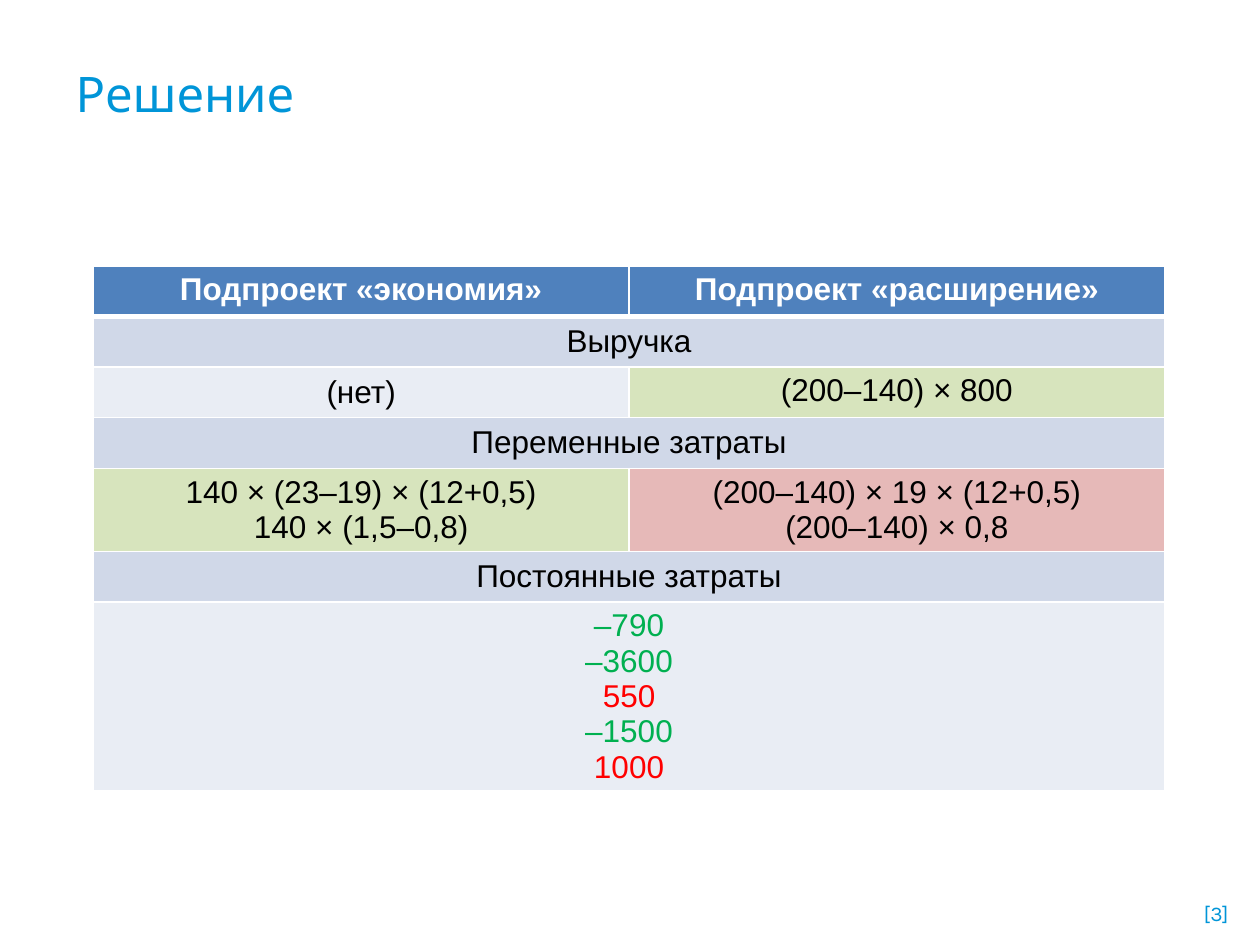
from dataclasses import dataclass

from lxml import etree
from pptx import Presentation
from pptx.dml.color import RGBColor
from pptx.enum.text import MSO_ANCHOR, PP_ALIGN
from pptx.oxml.ns import qn
from pptx.util import Cm, Pt

LEFT, CENTER, RIGHT = PP_ALIGN.LEFT, PP_ALIGN.CENTER, PP_ALIGN.RIGHT
TOP, MIDDLE = MSO_ANCHOR.TOP, MSO_ANCHOR.MIDDLE
WHITE, BLACK, BLUE, ACCENT = "FFFFFF", "000000", "4F81BD", "0095D8"
BAND, PALE = "D0D8E8", "E9EDF4"
GAIN, LOSS = "D7E4BD", "E6B9B8"
GREEN, RED = "00B050", "FF0000"


@dataclass
class Entry:
    lines: list[str]
    fill: str
    anchor: MSO_ANCHOR = MIDDLE
    colors: tuple[str, ...] = (BLACK,)
    bold: bool = False


@dataclass
class Row:
    height: float
    entries: list[Entry]


def color(value: str) -> RGBColor:
    return RGBColor.from_string(value)


def style(paragraph, align, font: str, size: float, tint: str, bold=False) -> None:
    paragraph.alignment = align
    for span in paragraph.runs:
        span.font.name = font
        span.font.size = Pt(size)
        span.font.bold = bold
        span.font.color.rgb = color(tint)


def place(box, left: float, top: float, width: float, height: float) -> None:
    box.left, box.top, box.width, box.height = map(Cm, (left, top, width, height))


def set_borders(cell, bottom: float) -> None:
    properties = cell._tc.get_or_add_tcPr()
    sides = (("a:lnL", 1), ("a:lnR", 1), ("a:lnT", 1), ("a:lnB", bottom))
    for position, (side, width) in enumerate(sides):
        line = etree.Element(qn(side), w=str(Pt(width)))
        fill = etree.SubElement(line, qn("a:solidFill"))
        etree.SubElement(fill, qn("a:srgbClr"), val=WHITE)
        properties.insert(position, line)


def fill_cell(cell, entry: Entry) -> None:
    cell.fill.solid()
    cell.fill.fore_color.rgb = color(entry.fill)
    cell.vertical_anchor = entry.anchor
    cell.text_frame.text = "\n".join(entry.lines)
    for number, paragraph in enumerate(cell.text_frame.paragraphs):
        tint = entry.colors[number % len(entry.colors)]
        style(paragraph, CENTER, "Arial", 18, tint, entry.bold)


def heading(text: str) -> Entry:
    return Entry([text], BLUE, TOP, (WHITE,), True)


def section(text: str) -> Row:
    return Row(1.02, [Entry([text], BAND)])


def draw_table(page, rows: list[Row]) -> None:
    height = sum(row.height for row in rows)
    table = page.shapes.add_table(
        len(rows), 2, Cm(1.88), Cm(5.36), Cm(21.6), Cm(height)
    ).table
    for number, row in enumerate(rows):
        table.rows[number].height = Cm(row.height)
        for cell in table.rows[number].cells:
            set_borders(cell, 3 if number == 0 else 1)
        if len(row.entries) == 1:
            table.cell(number, 0).merge(table.cell(number, 1))
        for column, entry in enumerate(row.entries):
            fill_cell(table.cell(number, column), entry)


def main() -> None:
    deck = Presentation()
    deck.slide_width, deck.slide_height = Cm(25.4), Cm(19.05)
    page = deck.slides.add_slide(deck.slide_layouts[5])

    title = page.shapes.title
    place(title, 1.27, 1.17, 22.86, 1.42)
    title.text_frame.text = "Решение"
    title.text_frame.vertical_anchor = MIDDLE
    style(title.text_frame.paragraphs[0], LEFT, "Karla", 28, ACCENT)

    draw_table(page, [
        Row(1.02, [heading("Подпроект «экономия»"), heading("Подпроект «расширение»")]),
        section("Выручка"),
        Row(1.02, [Entry(["(нет)"], PALE), Entry(["(200–140) × 800"], GAIN, TOP)]),
        section("Переменные затраты"),
        Row(1.67, [
            Entry(["140 × (23–19) × (12+0,5)", "140 × (1,5–0,8)"], GAIN),
            Entry(["(200–140) × 19 × (12+0,5)", "(200–140) × 0,8"], LOSS, TOP),
        ]),
        section("Постоянные затраты"),
        Row(3.79, [
            Entry(["–790", "–3600", "550", "–1500", "1000"], PALE,
                  colors=(GREEN, GREEN, RED, GREEN, RED)),
        ]),
    ])

    number_box = page.shapes.add_textbox(Cm(22.63), Cm(18.03), Cm(2.39), Cm(0.77))
    number_box.text_frame.word_wrap = True
    number_box.text_frame.text = "[3]"
    style(number_box.text_frame.paragraphs[0], RIGHT, "Karla", 12, ACCENT)

    deck.save("out.pptx")


if __name__ == "__main__":
    main()
